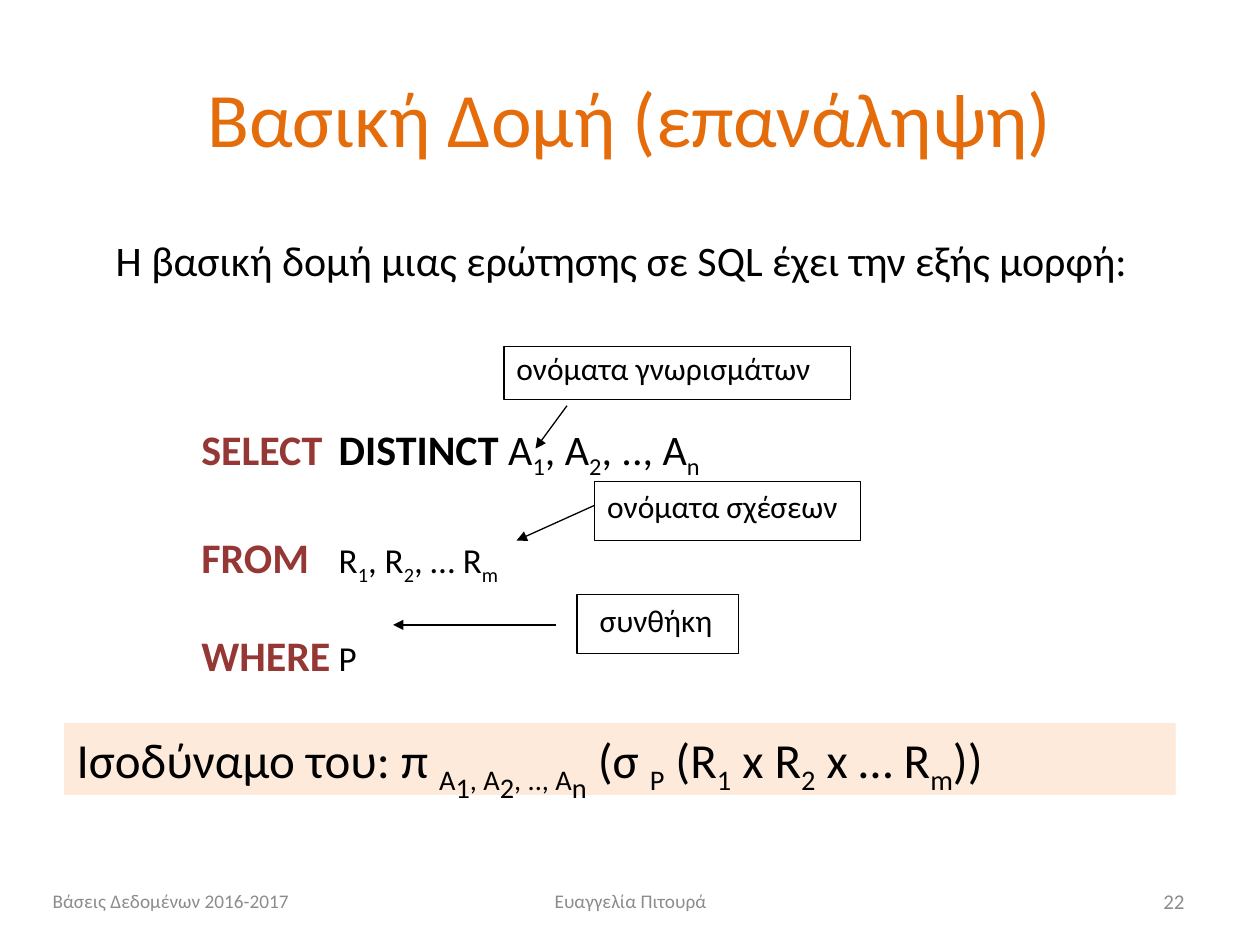
from itertools import cycle

from lxml import etree
from pptx import Presentation
from pptx import util as u
from pptx.dml.color import RGBColor
from pptx.enum import shapes, text
from pptx.oxml.ns import qn

BLACK = RGBColor(0x00, 0x00, 0x00)
ORANGE = RGBColor(0xE4, 0x6C, 0x0A)
KEYWORD = RGBColor(0x95, 0x37, 0x35)
PEACH = RGBColor(0xFD, 0xEA, 0xDA)
GREY = RGBColor(0x8C, 0x8C, 0x8C)
LEFT, CENTER, RIGHT = text.PP_ALIGN.LEFT, text.PP_ALIGN.CENTER, text.PP_ALIGN.RIGHT
MIDDLE = text.MSO_ANCHOR.MIDDLE


def levels(line, upper, lower, **style):
    """Spans of a line cut at each bar, alternating between two baselines."""
    return [(part, dict(style, baseline=level))
            for part, level in zip(line.split("|"), cycle((upper, lower)))]


class SlideBuilder:
    """Style and current slide; places are in percent of the slide's size."""

    font = "Calibri"
    line_width = u.Pt(0.75)

    def __init__(self, deck):
        self.deck = deck
        self.page = deck.slides.add_slide(deck.slide_layouts[6])

    def place(self, *shares):
        sides = cycle((self.deck.slide_width, self.deck.slide_height))
        return [round(share * side / 100) for share, side in zip(shares, sides)]

    def add_spans(self, para, spans, size, color=BLACK):
        for part, style in spans:
            span = para.add_run()
            span.text = part
            span.font.name = self.font
            span.font.size = u.Pt(style.get("size", size))
            span.font.bold = style.get("bold", False)
            span.font.color.rgb = style.get("color", color)
            if style.get("baseline"):
                span.font._element.set("baseline", str(style["baseline"] * 1000))

    def label(self, at, spans, size, color=BLACK, align=LEFT, anchor=None, parent=None):
        box = (parent or self.page).shapes.add_textbox(*self.place(*at))
        frame = box.text_frame
        frame.word_wrap = True
        frame.vertical_anchor = anchor
        para = frame.paragraphs[0]
        para.alignment = align
        self.add_spans(para, [(spans, {})] if isinstance(spans, str) else spans, size, color)
        return box

    def clauses(self, at, rows, size, tab):
        """One paragraph per (space before, spans), aligned on a tab stop."""
        box = self.label(at, rows[0][1], size)
        for gap, spans in rows[1:]:
            para = box.text_frame.add_paragraph()
            para.space_before = u.Pt(gap)
            self.add_spans(para, spans, size)
        for para in box.text_frame.paragraphs:
            tabs = etree.SubElement(para._p.get_or_add_pPr(), qn("a:tabLst"))
            etree.SubElement(tabs, qn("a:tab"), pos=str(u.Inches(tab)), algn="l")

    def rectangle(self, at, fill=None, line=None, parent=None):
        box = (parent or self.page).shapes.add_shape(
            shapes.MSO_SHAPE.RECTANGLE, *self.place(*at))
        box.shadow.inherit = False
        if fill is None:
            box.fill.background()
        else:
            box.fill.solid()
            box.fill.fore_color.rgb = fill
        if line is None:
            box.line.fill.background()
        else:
            box.line.color.rgb = line
            box.line.width = self.line_width

    def arrow(self, ends, parent):
        line = parent.shapes.add_connector(
            shapes.MSO_CONNECTOR.STRAIGHT, *self.place(*ends))
        line.line.color.rgb = BLACK
        line.line.width = self.line_width
        etree.SubElement(line.line._get_or_add_ln(), qn("a:tailEnd"), type="triangle")
        etree.SubElement(line._element.spPr, qn("a:effectLst"))

    def callout(self, words, words_at, frame_at, ends):
        group = self.page.shapes.add_group_shape()
        self.rectangle(frame_at, line=BLACK, parent=group)
        self.label(words_at, words, 18, parent=group)
        self.arrow(ends, group)


def main():
    deck = Presentation()
    deck.slide_width, deck.slide_height = u.Inches(10), u.Inches(7.5)
    slide = SlideBuilder(deck)

    # Title and introduction
    slide.label((5, 4, 90, 16.67), "Βασική Δομή (επανάληψη)", 44, ORANGE, CENTER, MIDDLE)
    slide.label((8.2, 24.13, 84.2, 6.67),
                "Η βασική δομή μιας ερώτησης σε SQL έχει την εξής μορφή:", 24)

    # Query skeleton
    keyword = dict(bold=True, color=KEYWORD)
    slide.clauses((15, 44.13, 56.7, 27.33), [
        (0, [("SELECT\t", keyword), ("DISTINCT ", dict(bold=True))]
         + levels("Α|1|, Α|2|, .., Α|n", 0, -25)),
        (29.3, [("FROM\t", keyword)] + levels("R|1|, R|2|, … R|m", 0, -25, size=20)),
        (24.4, [("WHERE\t", keyword), ("P", dict(size=20))]),
    ], size=24, tab=1.09)

    # Equivalent expression in relational algebra
    band = (5.1, 76.53, 88.2, 7.6)
    slide.rectangle(band, fill=PEACH)
    slide.label(band, [("Ισοδύναμο του: π ", {})]
                + levels("A|1|, A|2|, .., A|n", -25, -42)
                + levels(" (σ |P| (R|1| x R|2| x … R|m|))", 0, -25), 28)

    # Callouts: words, their place, frame, arrow
    slide.callout("ονόματα σχέσεων", (47.2, 50.93, 28.2, 6),
                  (47.2, 50.93, 21.1, 6.27), (47.2, 53.47, 41, 57.2))
    slide.callout("ονόματα γνωρισμάτων", (40, 36.27, 30.7, 5.33),
                  (40, 36.67, 27.5, 5.6), (45, 42.93, 42.5, 47.47))
    slide.callout("συνθήκη", (46.6, 62.93, 22.2, 5.07),
                  (45.8, 62.93, 12.8, 6.27), (44.1, 66.13, 31.2, 66.13))

    # Footer
    for left, width, words, size, align in (
            (3.2, 23.3, "Βάσεις Δεδομένων 2016-2017", 11, LEFT),
            (34.2, 31.7, "Ευαγγελία Πιτουρά", 11, CENTER),
            (71.7, 23.3, "22", 12, RIGHT)):
        slide.label((left, 92.67, width, 5.33), words, size, GREY, align, MIDDLE)

    deck.save("out.pptx")


if __name__ == "__main__":
    main()
